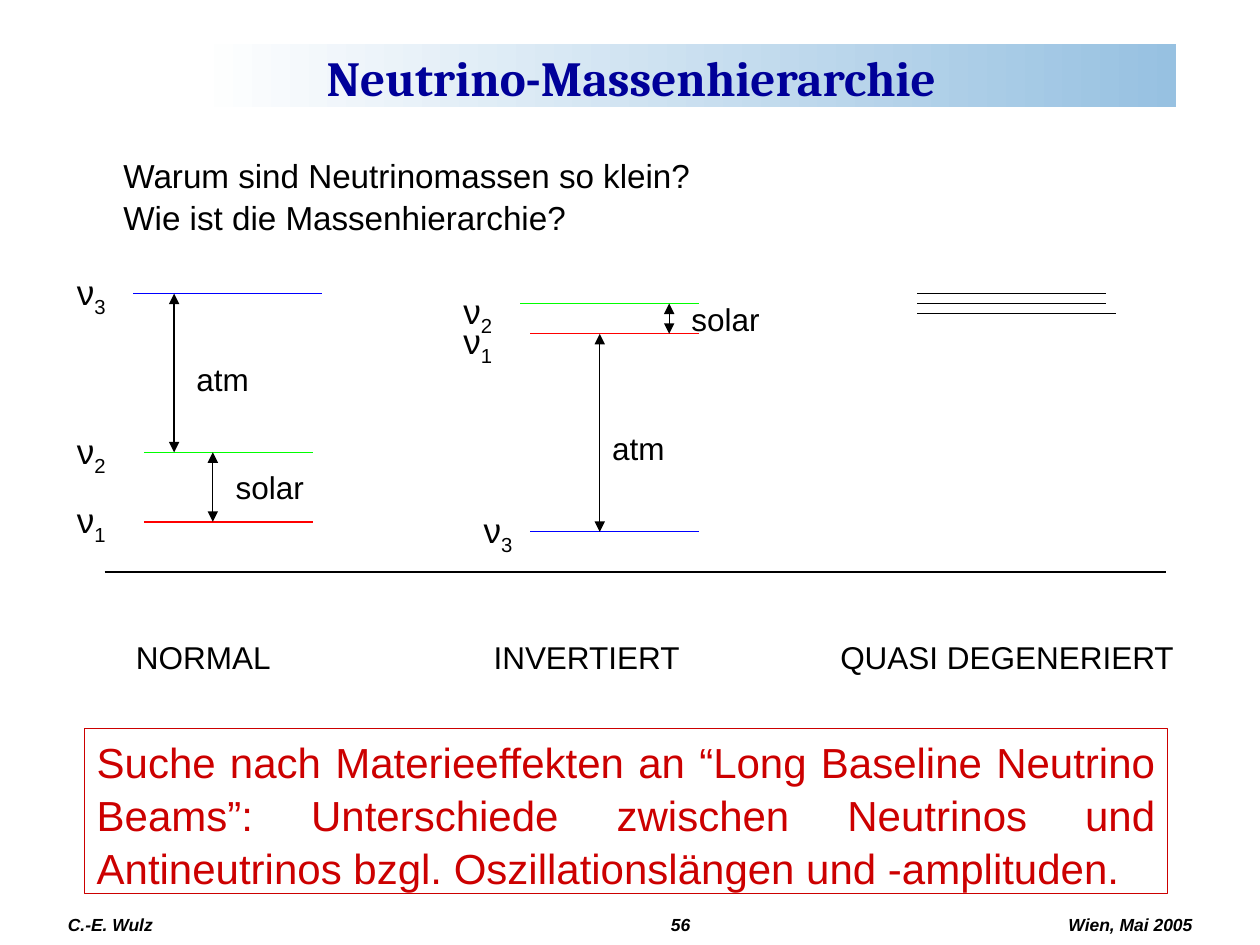
from dataclasses import dataclass

from lxml import etree
from pptx import Presentation
from pptx.dml.color import RGBColor
from pptx.enum.shapes import MSO_CONNECTOR, MSO_SHAPE
from pptx.enum.text import MSO_ANCHOR, PP_ALIGN
from pptx.oxml.ns import qn
from pptx.util import Cm, Pt

LEFT, CENTER, JUSTIFY = PP_ALIGN.LEFT, PP_ALIGN.CENTER, PP_ALIGN.JUSTIFY
TOP, MIDDLE = MSO_ANCHOR.TOP, MSO_ANCHOR.MIDDLE
RECTANGLE, STRAIGHT = MSO_SHAPE.RECTANGLE, MSO_CONNECTOR.STRAIGHT


@dataclass(frozen=True)
class Theme:
    body_font: str = "Arial"
    title_font: str = "Cambria"
    black: str = "000000"
    white: str = "FFFFFF"
    sky: str = "97C1E1"
    navy: str = "000099"
    crimson: str = "CC0000"
    red: str = "FF0000"
    green: str = "00FF00"
    blue: str = "0000FF"
    title_size: int = 28
    statement_size: int = 24
    symbol_size: int = 20
    question_size: int = 19
    label_size: int = 18
    footer_size: int = 10
    line_width: float = 0.75


class SlideBuilder:
    def __init__(self, slide, theme):
        self.slide = slide
        self.theme = theme

    def style(self, frame, size, color, font=None, align=LEFT, anchor=TOP, bold=False, italic=False):
        frame.word_wrap = True
        frame.vertical_anchor = anchor
        for para in frame.paragraphs:
            para.alignment = align
            for span in para.runs:
                span.font.name = font or self.theme.body_font
                span.font.size = Pt(size)
                span.font.bold = bold
                span.font.italic = italic
                span.font.color.rgb = RGBColor.from_string(color)

    def band(self, left, top, width, height):
        band = self.slide.shapes.add_shape(RECTANGLE, Cm(left), Cm(top), Cm(width), Cm(height))
        band.shadow.inherit = False
        band.line.fill.background()
        band.fill.gradient()
        band.fill.gradient_angle = 0
        for stop, color in zip(band.fill.gradient_stops, (self.theme.white, self.theme.sky)):
            stop.color.rgb = RGBColor.from_string(color)
        self.slide.shapes._spTree.insert(2, band._element)

    def title(self, text, left, top, width, height):
        title = self.slide.shapes.title
        title.left, title.top, title.width, title.height = Cm(left), Cm(top), Cm(width), Cm(height)
        title.text_frame.text = text
        self.style(title.text_frame, self.theme.title_size, self.theme.navy,
                   self.theme.title_font, CENTER, MIDDLE, bold=True)

    def text(self, text, left, top, width, height, size, **style):
        box = self.slide.shapes.add_textbox(Cm(left), Cm(top), Cm(width), Cm(height))
        box.text_frame.text = text
        self.style(box.text_frame, size, self.theme.black, **style)
        return box

    def label(self, text, left, top, width):
        self.text(text, left, top, width, 1.02, self.theme.label_size)

    def neutrino(self, index, left, top, width):
        box = self.text("ν", left, top, width, 1.09, self.theme.symbol_size)
        span = box.text_frame.paragraphs[0].add_run()
        span.text = index
        self.style(box.text_frame, self.theme.symbol_size, self.theme.black)
        span._r.get_or_add_rPr().set("baseline", "-25000")

    def line(self, x1, y1, x2, y2, color, arrows=False):
        line = self.slide.shapes.add_connector(STRAIGHT, Cm(x1), Cm(y1), Cm(x2), Cm(y2))
        line.line.color.rgb = RGBColor.from_string(color)
        line.line.width = Pt(self.theme.line_width)
        if arrows:
            outline = line.line._get_or_add_ln()
            for end in ("a:headEnd", "a:tailEnd"):
                etree.SubElement(outline, qn(end)).set("type", "triangle")
        etree.SubElement(line._element.spPr, qn("a:effectLst"))

    def statement(self, text, left, top, width, height):
        box = self.slide.shapes.add_shape(RECTANGLE, Cm(left), Cm(top), Cm(width), Cm(height))
        box.shadow.inherit = False
        box.fill.background()
        box.line.color.rgb = RGBColor.from_string(self.theme.crimson)
        box.line.width = Pt(self.theme.line_width)
        box.text_frame.text = text
        self.style(box.text_frame, self.theme.statement_size, self.theme.crimson, align=JUSTIFY)
        box.text_frame.paragraphs[0].line_spacing = 1.05


def main():
    deck = Presentation()
    deck.slide_width, deck.slide_height = Cm(25.4), Cm(19.05)
    theme = Theme()
    page = SlideBuilder(deck.slides.add_slide(deck.slide_layouts[5]), theme)

    page.band(3.94, 0.89, 19.76, 1.27)
    page.title("Neutrino-Massenhierarchie", 1.75, 0.89, 21.95, 1.32)
    questions = page.text("Warum sind Neutrinomassen so klein?\nWie ist die Massenhierarchie?",
                          2.24, 2.97, 12.01, 1.85, theme.question_size)
    for para in questions.text_frame.paragraphs:
        para.line_spacing = 1.05

    levels = [
        ("3", theme.blue, 2.69, 6.5, 5.92, 1.3, 5.33, 1.8),
        ("2", theme.green, 2.9, 6.3, 9.12, 1.3, 8.53, 2.01),
        ("1", theme.red, 2.9, 6.3, 10.52, 1.3, 9.93, 2.29),
        ("2", theme.green, 10.49, 14.1, 6.12, 9.09, 5.72, 1.4),
        ("1", theme.red, 10.69, 14.1, 6.73, 9.09, 6.32, 2.39),
        ("3", theme.blue, 10.69, 14.1, 10.72, 9.5, 10.13, 2.01),
    ]
    for index, color, start, end, height, left, top, width in levels:
        page.line(start, height, end, height, color)
        page.neutrino(index, left, top, width)

    for height, end in ((5.92, 22.3), (6.12, 22.3), (6.32, 22.5)):
        page.line(18.49, height, end, height, theme.black)
    page.line(2.11, 11.53, 23.5, 11.53, theme.black)

    splittings = [
        ("atm", 3.51, 5.92, 9.12, 3.71, 7.14, 2.01),
        ("solar", 4.29, 9.12, 10.52, 4.5, 9.32, 2.59),
        ("atm", 12.09, 6.73, 10.72, 12.09, 8.53, 2.01),
        ("solar", 13.49, 6.12, 6.73, 13.69, 5.92, 2.59),
    ]
    for name, x, upper, lower, left, top, width in splittings:
        page.line(x, upper, x, lower, theme.black, arrows=True)
        page.label(name, left, top, width)

    for name, left, width in (("NORMAL", 2.49, 3.89), ("INVERTIERT", 9.7, 4.8),
                              ("QUASI DEGENERIERT", 16.69, 8.26)):
        page.label(name, left, 12.73, width)

    page.statement("Suche nach Materieeffekten an “Long Baseline Neutrino Beams”: "
                   "Unterschiede zwischen Neutrinos und Antineutrinos bzgl. "
                   "Oszillationslängen und -amplituden.", 1.7, 14.68, 21.84, 3.33)

    for text, left, width, align in (("C.-E. Wulz", 1.12, 5.51, LEFT), ("56", 13.06, 1.32, CENTER),
                                     ("Wien, Mai 2005", 21.29, 4.11, LEFT)):
        page.text(text, left, 18.21, width, 0.84, theme.footer_size,
                  align=align, anchor=MIDDLE, bold=True, italic=True)

    deck.save("out.pptx")


if __name__ == "__main__":
    main()
